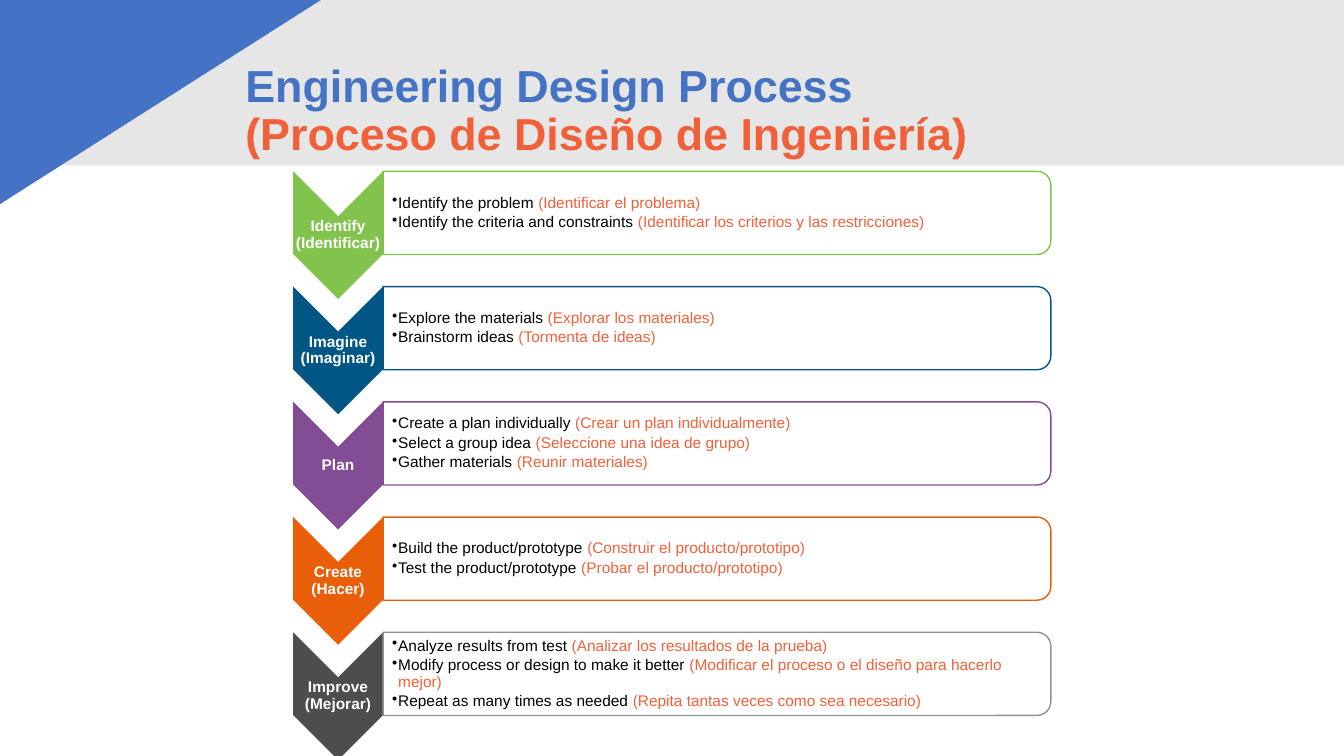
import dataclasses

import pptx
import pptx.dml.color
import pptx.enum.shapes
import pptx.enum.text
import pptx.oxml
import pptx.oxml.ns
import pptx.util

SHAPE = pptx.enum.shapes.MSO_SHAPE
ALIGN = pptx.enum.text.PP_ALIGN
COLS, ROWS = 80, 45


@dataclasses.dataclass(frozen=True)
class Theme:
    font: str = "Arial"
    title_size: int = 32
    text_size: int = 11
    blue: str = "4472C4"
    band: str = "E7E6E6"
    spanish: str = "F16038"
    black: str = "000000"
    white: str = "FFFFFF"


# label, chevron colour, outline colour, (English, Spanish) steps
STAGES = [
    ("Identify (Identificar)", "82C34D", "82C34D", [
        ("Identify the problem ", "(Identificar el problema)"),
        ("Identify the criteria and constraints ",
         "(Identificar los criterios y las restricciones)")]),
    ("Imagine (Imaginar)", "005786", "005786", [
        ("Explore the materials ", "(Explorar los materiales)"),
        ("Brainstorm ideas ", "(Tormenta de ideas)")]),
    ("Plan", "824D94", "824D94", [
        ("Create a plan individually ", "(Crear un plan individualmente)"),
        ("Select a group idea ", "(Seleccione una idea de grupo)"),
        ("Gather materials ", "(Reunir materiales)")]),
    ("Create (Hacer)", "E95E09", "E95E09", [
        ("Build the product/prototype ", "(Construir el producto/prototipo)"),
        ("Test the product/prototype ", "(Probar el producto/prototipo)")]),
    ("Improve (Mejorar)", "4D4D4F", "919191", [
        ("Analyze results from test ", "(Analizar los resultados de la prueba)"),
        ("Modify process or design to make it better ",
         "(Modificar el proceso o el diseño para hacerlo mejor)"),
        ("Repeat as many times as needed ",
         "(Repita tantas veces como sea necesario)")]),
]


def rgb(value):
    return pptx.dml.color.RGBColor.from_string(value)


def assign(target, values):
    for name, value in values.items():
        setattr(target, name, value)


class Deck:
    """Draws styled elements on the current slide, on a grid of COLS by ROWS."""

    def __init__(self, prs, theme):
        self.theme = theme
        self.col = prs.slide_width / COLS
        self.row = prs.slide_height / ROWS
        self.s = prs.slides.add_slide(prs.slide_layouts[5])

    def place(self, x, y, w, h):
        return [int(v) for v in (x * self.col, y * self.row,
                                 w * self.col, h * self.row)]

    def shape(self, kind, x, y, w, h, fill, line=None, turned=False):
        """Add a preset; a turned one fills the given box after a quarter turn."""
        left, top, width, height = self.place(x, y, w, h)
        if turned:
            left, top = left + (width - height) // 2, top + (height - width) // 2
            width, height = height, width
        sp = self.s.shapes.add_shape(kind, left, top, width, height)
        sp.rotation = 90 if turned else 0
        sp.shadow.inherit = False
        sp.fill.solid()
        sp.fill.fore_color.rgb = rgb(fill)
        if line:
            sp.line.color.rgb = rgb(line)
            sp.line.width = pptx.util.Pt(1)
        else:
            sp.line.fill.background()

    def frame(self, tf, **margins):
        assign(tf, {"word_wrap": True,
                    "auto_size": pptx.enum.text.MSO_AUTO_SIZE.NONE,
                    "vertical_anchor": pptx.enum.text.MSO_ANCHOR.MIDDLE,
                    **margins})

    def textbox(self, x, y, w, h, left_margin):
        tf = self.s.shapes.add_textbox(*self.place(x, y, w, h)).text_frame
        edge = pptx.util.Inches(0.01)
        self.frame(tf, margin_left=pptx.util.Inches(left_margin),
                   margin_top=edge, margin_right=edge, margin_bottom=edge)
        return tf

    def run(self, p, text, size, color, bold=False):
        r = p.add_run()
        r.text = text
        assign(r.font, {"name": self.theme.font, "size": pptx.util.Pt(size),
                        "bold": bold})
        r.font.color.rgb = rgb(color)

    def title(self, x, y, w, h, english, spanish):
        t = self.theme
        sp = self.s.shapes.title
        assign(sp, dict(zip(("left", "top", "width", "height"),
                            self.place(x, y, w, h))))
        self.s.shapes._spTree.append(sp._element)  # in front of the band
        self.frame(sp.text_frame)
        p = sp.text_frame.paragraphs[0]
        assign(p, {"alignment": ALIGN.LEFT, "line_spacing": 0.9})
        self.run(p, english, t.title_size, t.blue, True)
        p.add_line_break()
        self.run(p, spanish, t.title_size, t.spanish, True)

    def label(self, x, y, w, h, text):
        p = self.textbox(x, y, w, h, 0.01).paragraphs[0]
        assign(p, {"alignment": ALIGN.CENTER, "line_spacing": 0.9})
        self.run(p, text, self.theme.text_size, self.theme.white, True)

    def steps(self, x, y, w, h, pairs):
        t = self.theme
        tf = self.textbox(x, y, w, h, 0.09)
        for i, (english, spanish) in enumerate(pairs):
            p = tf.add_paragraph() if i else tf.paragraphs[0]
            pPr = p._p.get_or_add_pPr()
            indent = pptx.util.Inches(0.06)
            pPr.set("marL", str(indent))
            pPr.set("indent", str(-indent))
            bullet = pptx.oxml.parse_xml(
                f'<a:buChar {pptx.oxml.ns.nsdecls("a")} char="•"/>')
            pPr.append(bullet)
            assign(p, {"line_spacing": 0.9, "space_after": pptx.util.Pt(2)})
            self.run(p, english, t.text_size, t.black)
            self.run(p, spanish, t.text_size, t.spanish)


def main():
    prs = pptx.Presentation()
    prs.slide_width = pptx.util.Inches(13.33)
    prs.slide_height = pptx.util.Inches(7.5)
    theme = Theme()
    deck = Deck(prs, theme)

    deck.shape(SHAPE.RECTANGLE, 0, 0, COLS, 9.85, theme.band)
    deck.shape(SHAPE.RIGHT_TRIANGLE, 0, 0, 19.1, 12.15, theme.blue, turned=True)
    deck.title(14, 2.3, 58.2, 8.7, "Engineering Design Process ",
               "(Proceso de Diseño de Ingeniería)")

    arrow_x, arrow_w, arrow_h = 17.45, 5.35, 7.6
    box_x, box_w, box_h = arrow_x + arrow_w, 39.75, 4.95
    first_y, pitch = 10.2, 6.86
    for i, (name, color, outline, pairs) in enumerate(STAGES):
        y = first_y + i * pitch
        deck.shape(SHAPE.CHEVRON, arrow_x, y, arrow_w, arrow_h, color, turned=True)
        deck.label(arrow_x, y + arrow_w / 2, arrow_w, arrow_h - arrow_w, name)
        deck.shape(SHAPE.ROUND_2_SAME_RECTANGLE, box_x, y, box_w, box_h,
                   theme.white, outline, turned=True)
        deck.steps(box_x, y, box_w, box_h, pairs)

    prs.save("out.pptx")


if __name__ == "__main__":
    main()
